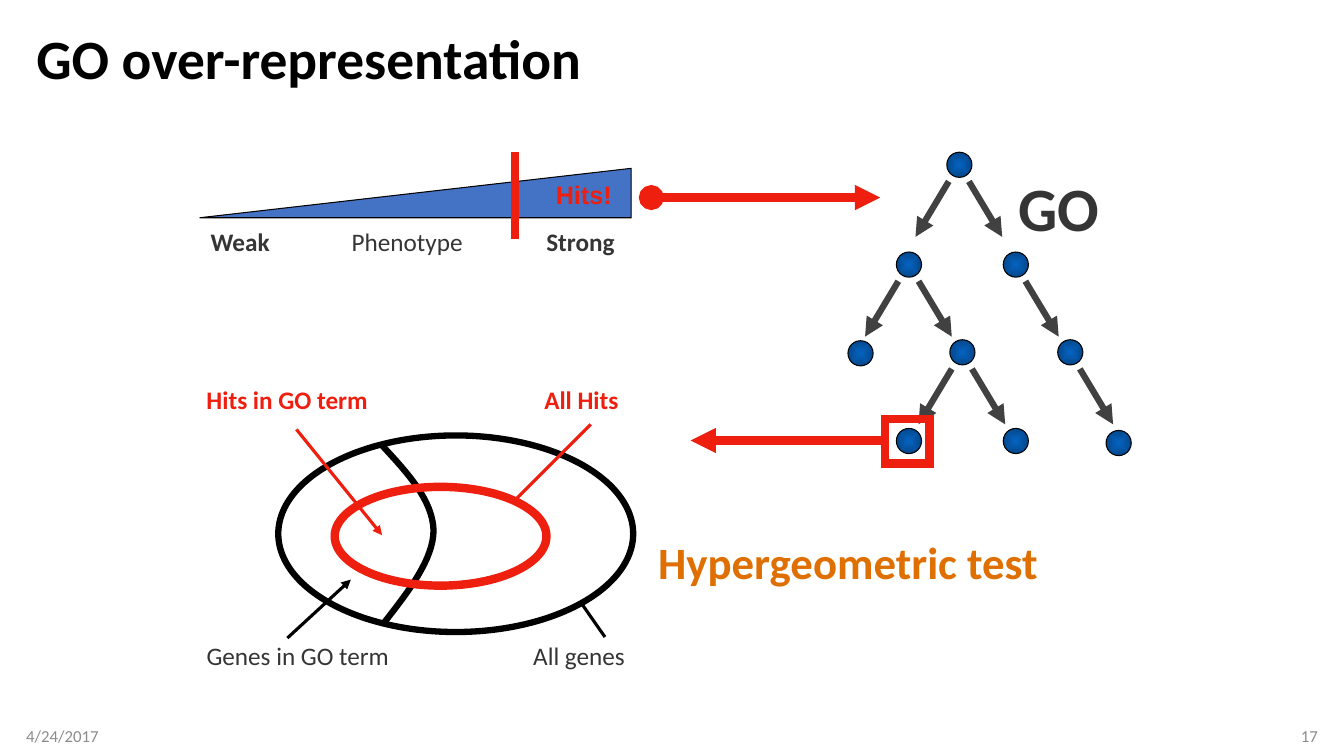
from lxml.etree import SubElement
from pptx import Presentation
from pptx.dml.color import RGBColor
from pptx.enum.shapes import MSO_CONNECTOR, MSO_SHAPE
from pptx.enum.text import MSO_ANCHOR, MSO_AUTO_SIZE, PP_ALIGN
from pptx.oxml.ns import qn
from pptx.util import Pt

PX = 9144
COLORS = {
    "black": "000000", "red": "EF1F0F", "text": "353535", "arrow": "414141",
    "footer": "8C8C8C", "wedge": "4472C4", "orange": "DE6F00",
    "node_core": "0563C1", "node_rim": "04478A",
}
NODE_SIZE = 25
TREE_NODES = [
    (939, 151, (-1, 1)),
    (889, 250, (-1, 1)), (995, 250, (1,)),
    (841, 338, ()), (942, 337, (-1, 1)), (1049, 337, (1,)),
    (889, 425, ()), (995, 425, ()), (1097, 427, ()),
]
TERM_BOUNDARY = [
    [(379, 442), (404, 469), (429, 496), (430, 526)],
    [(430, 526), (430, 555), (405, 587), (380, 619)],
]


def px(*values):
    return [round(v * PX) for v in values]


def color(name):
    return RGBColor.from_string(COLORS[name])


def add_run(p, text, size, name, bold=False, font="Calibri"):
    r = p.add_run()
    r.text = text
    r.font.size = Pt(size)
    r.font.name = font
    r.font.bold = bold
    r.font.color.rgb = color(name)


def add_title(slide, text):
    sp = slide.shapes.title
    sp.left, sp.top, sp.width, sp.height = px(26, 25, 1281, 72)
    tf = sp.text_frame
    tf.auto_size = MSO_AUTO_SIZE.NONE
    tf.vertical_anchor = MSO_ANCHOR.MIDDLE
    p = tf.paragraphs[0]
    p.alignment = PP_ALIGN.LEFT
    p.line_spacing = 0.9
    add_run(p, text, 39.6, "black", True)


def add_label(slide, box, text, size=18, name="text", bold=False,
              font="Calibri", align=PP_ALIGN.LEFT):
    tf = slide.shapes.add_textbox(*px(*box)).text_frame
    tf.word_wrap = False
    tf.auto_size = MSO_AUTO_SIZE.SHAPE_TO_FIT_TEXT
    p = tf.paragraphs[0]
    p.alignment = align
    add_run(p, text, size, name, bold, font)


def add_footer(slide, box, text, align):
    tf = slide.shapes.add_textbox(*px(*box)).text_frame
    tf.word_wrap = True
    tf.vertical_anchor = MSO_ANCHOR.MIDDLE
    if align == PP_ALIGN.LEFT:
        tf.margin_left = 0
    else:
        tf.margin_right = 0
    p = tf.paragraphs[0]
    p.alignment = align
    add_run(p, text, 12, "footer")


def set_outline(sp, name, width):
    sp.shadow.inherit = False
    sp.line.color.rgb = color(name)
    sp.line.width = Pt(width)
    SubElement(sp.line._get_or_add_ln(), qn("a:miter")).set("lim", "800000")


def add_outline(slide, kind, box, name, width):
    sp = slide.shapes.add_shape(kind, *px(*box))
    sp.fill.background()
    set_outline(sp, name, width)
    return sp


def add_line(slide, start, end, name, width, head=None, tail=None):
    cx = slide.shapes.add_connector(MSO_CONNECTOR.STRAIGHT, *px(*start, *end))
    cx.line.color.rgb = color(name)
    cx.line.width = Pt(width)
    ln = cx.line._get_or_add_ln()
    for tag, kind in (("a:headEnd", head), ("a:tailEnd", tail)):
        if kind:
            SubElement(ln, qn(tag)).set("type", kind)
    SubElement(cx._element.spPr, qn("a:effectLst"))


def add_node(slide, x, y):
    sp = add_outline(slide, MSO_SHAPE.OVAL, (x, y, NODE_SIZE, NODE_SIZE), "black", 0.75)
    sp.fill.gradient()
    for stop, name in zip(sp.fill.gradient_stops, ("node_core", "node_rim")):
        stop.color.rgb = color(name)
    grad = sp._element.spPr.find(qn("a:gradFill"))
    grad.remove(grad.find(qn("a:lin")))
    shade = SubElement(grad, qn("a:path"))
    shade.set("path", "shape")
    center = SubElement(shade, qn("a:fillToRect"))
    for side in "ltrb":
        center.set(side, "50000")


def add_tree(slide):
    for x, y, sides in TREE_NODES:
        add_node(slide, x, y)
        cx, cy = x + NODE_SIZE // 2, y + NODE_SIZE // 2
        for side in sides:
            add_line(slide, (cx + 10 * side, cy + 17), (cx + 43 * side, cy + 72),
                     "arrow", 4.5, tail="triangle")
    add_label(slide, (1000, 164, 115, 83), "GO", 44, bold=True)


def bezier(points, t):
    weights = ((1 - t) ** 3, 3 * t * (1 - t) ** 2, 3 * t ** 2 * (1 - t), t ** 3)
    return [sum(w * pt[i] for w, pt in zip(weights, points)) for i in (0, 1)]


def add_curve(slide, segments, name, width, steps=16):
    builder = slide.shapes.build_freeform(*px(*segments[0][0]))
    points = [px(*bezier(s, i / steps)) for s in segments for i in range(1, steps + 1)]
    builder.add_line_segments(points, close=False)
    sp = builder.convert_to_shape()
    sp.fill.background()
    set_outline(sp, name, width)


def add_phenotype_scale(slide):
    wedge = add_outline(slide, MSO_SHAPE.RIGHT_TRIANGLE, (198, 167, 428, 49), "black", 0.75)
    wedge.fill.solid()
    wedge.fill.fore_color.rgb = color("wedge")
    wedge._element.spPr.find(qn("a:xfrm")).set("flipH", "1")
    add_label(slide, (199, 220, 82, 40), "Weak", bold=True)
    add_label(slide, (339, 220, 134, 40), "Phenotype")
    add_label(slide, (532, 220, 96, 40), "Strong", bold=True)
    add_line(slide, (511, 151), (511, 237), "red", 6)
    add_label(slide, (529, 173, 100, 38), "Hits!", name="red", bold=True,
              font="Arial", align=PP_ALIGN.CENTER)


def add_gene_sets(slide):
    add_outline(slide, MSO_SHAPE.OVAL, (276, 432, 352, 195), "black", 4.5)
    add_curve(slide, TERM_BOUNDARY, "black", 4.5)
    add_outline(slide, MSO_SHAPE.OVAL, (332, 483, 210, 98), "red", 6)
    add_line(slide, (577, 599), (600, 632), "black", 2.25)
    add_line(slide, (512, 495), (586, 421), "red", 2.25)
    add_line(slide, (285, 633), (348, 575), "black", 2.25, tail="triangle")
    add_line(slide, (294, 426), (379, 531), "red", 2.25, tail="triangle")
    add_label(slide, (195, 376, 246, 50), "Hits in GO term", name="red", bold=True)
    add_label(slide, (530, 376, 126, 50), "All Hits", name="red", bold=True)
    add_label(slide, (195, 630, 265, 50), "Genes in GO term")
    add_label(slide, (519, 630, 147, 50), "All genes")


def main():
    prs = Presentation()
    prs.slide_width, prs.slide_height = px(1333, 750)
    slide = prs.slides.add_slide(prs.slide_layouts[5])
    add_title(slide, "GO over-representation")
    add_footer(slide, (26, 710, 300, 40), "4/24/2017", PP_ALIGN.LEFT)
    add_footer(slide, (1007, 710, 300, 40), "17", PP_ALIGN.RIGHT)
    add_phenotype_scale(slide)
    add_tree(slide)
    add_line(slide, (646, 196), (873, 196), "red", 6, head="oval", tail="triangle")
    add_gene_sets(slide)
    add_outline(slide, MSO_SHAPE.RECTANGLE, (878, 416, 44, 44), "red", 6)
    add_line(slide, (877, 437), (685, 437), "red", 6, tail="triangle")
    add_label(slide, (643, 526, 454, 64), "Hypergeometric test", 32, "orange", True)
    prs.save("out.pptx")


if __name__ == "__main__":
    main()
